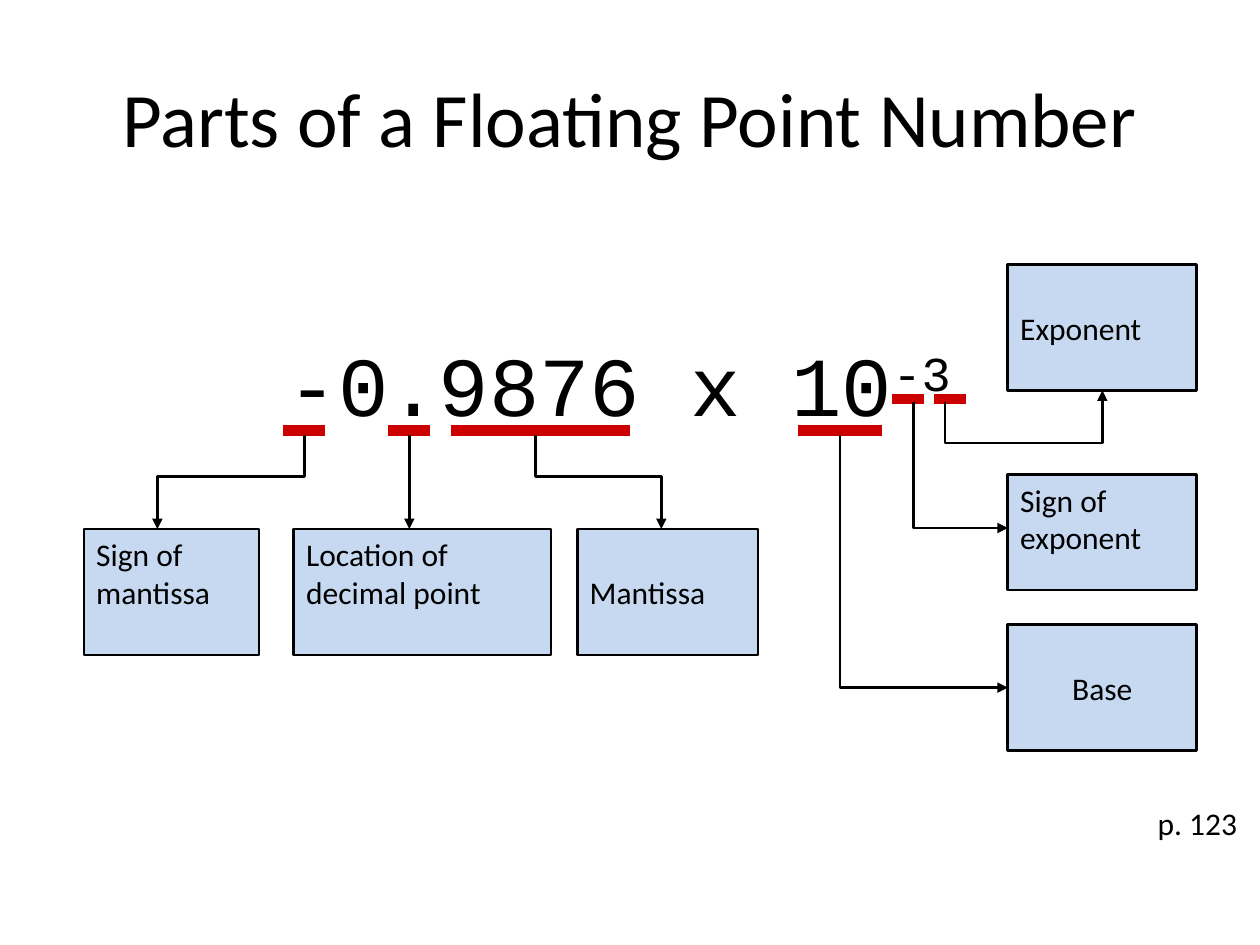
import dataclasses

import pptx
import pptx.dml.color
import pptx.enum.shapes
import pptx.enum.text
import pptx.oxml
import pptx.oxml.ns
import pptx.util

Cm = pptx.util.Cm
Pt = pptx.util.Pt
Align = pptx.enum.text.PP_ALIGN
Anchor = pptx.enum.text.MSO_ANCHOR
UNIT = Cm(2.54) / 12


@dataclasses.dataclass(frozen=True)
class Theme:
    """Colours, fonts and type sizes of the slide."""
    ink: str = "000000"
    fill: str = "C6D9F1"
    mark: str = "CC0000"
    sans: str = "Calibri"
    mono: str = "Courier New"
    title: int = 44
    sum: int = 48
    label: int = 18
    thin: float = 1.5
    thick: float = 6


THEME = Theme()


def tint(name):
    """Return the colour for a hex name."""
    return pptx.dml.color.RGBColor.from_string(name)


def grid(box, x, y):
    """Turn grid steps inside a box into slide lengths."""
    return round(box[0] + x * UNIT), round(box[1] + y * UNIT)


def write(par, text, size, font=THEME.sans):
    """Add one styled run to a paragraph."""
    run = par.add_run()
    run.text = text
    run.font.size = Pt(size)
    run.font.name = font
    run.font.color.rgb = tint(THEME.ink)
    return run


def frame(slide, box, align, anchor=Anchor.TOP):
    """Add a text box and return its first paragraph."""
    text = slide.shapes.add_textbox(*box).text_frame
    text.word_wrap = True
    text.vertical_anchor = anchor
    par = text.paragraphs[0]
    par.alignment = align
    return par


def stroke(line, color, width):
    """Set the colour and width of a line."""
    line.color.rgb = tint(color)
    line.width = Pt(width)


def point(line):
    """Put a triangle at the start of a line."""
    tag = '<a:headEnd %s type="triangle"/>' % pptx.oxml.ns.nsdecls("a")
    line._get_or_add_ln().append(pptx.oxml.parse_xml(tag))


def join(slide, start, end, color, width):
    """Draw a straight line without a shadow."""
    kind = pptx.enum.shapes.MSO_CONNECTOR.STRAIGHT
    link = slide.shapes.add_connector(kind, *start, *end)
    stroke(link.line, color, width)
    tag = "<a:effectLst %s/>" % pptx.oxml.ns.nsdecls("a")
    link._element.spPr.append(pptx.oxml.parse_xml(tag))
    return link


def bend(slide, box, spots):
    """Draw an angled arrow whose head is at the first spot."""
    first, *rest = [grid(box, *spot) for spot in spots]
    form = slide.shapes.build_freeform(*first)
    form.add_line_segments(rest, close=False)
    shape = form.convert_to_shape()
    shape.shadow.inherit = False
    shape.fill.background()
    stroke(shape.line, THEME.ink, THEME.thin)
    point(shape.line)


def label(slide, box, lines, align, anchor):
    """Draw a filled box that names one part of the number."""
    kind = pptx.enum.shapes.MSO_SHAPE.RECTANGLE
    shape = slide.shapes.add_shape(kind, *box)
    shape.shadow.inherit = False
    shape.fill.solid()
    shape.fill.fore_color.rgb = tint(THEME.fill)
    stroke(shape.line, THEME.ink, THEME.thin)
    text = shape.text_frame
    text.word_wrap = True
    text.vertical_anchor = anchor
    par = text.paragraphs[0]
    par.alignment = align
    for row, line in enumerate(lines):
        if row:
            par.add_line_break()
        write(par, line, THEME.label)


def head(slide, box):
    """Write the slide title."""
    par = frame(slide, box, Align.CENTER, Anchor.MIDDLE)
    write(par, "Parts of a Floating Point Number", THEME.title)


def number(slide, box):
    """Write the floating point number with its exponent raised."""
    par = frame(slide, box, Align.CENTER)
    par.space_before = Pt(THEME.label / 2)
    write(par, "-0.9876 x 10", THEME.sum, THEME.mono)
    power = write(par, "-3", THEME.sum, THEME.mono)
    power.font._element.set("baseline", "30000")


def marks(slide, box):
    """Underline each part of the number."""
    low, high = 16, 13
    for left, right, y in ((19, 23, low), (29, 33, low), (35, 52, low),
                           (68, 76, low), (77, 80, high), (81, 84, high)):
        join(slide, grid(box, left, y), grid(box, right, y),
             THEME.mark, THEME.thick)


def labels(slide, box):
    """Place the named boxes in a row and in a column."""
    row, col = 25.4, 88
    left, mid, top = Align.LEFT, Anchor.MIDDLE, Anchor.TOP
    for x, y, wide, high, lines, align, anchor in (
            (0, row, 16.7, 12, ["Sign of", "mantissa"], left, top),
            (20, row, 24.5, 12, ["Location of", "decimal point"], left, top),
            (47, row, 17.2, 12, ["Mantissa"], left, mid),
            (col, 0.2, 18, 12, ["Exponent"], left, mid),
            (col, 20.2, 18, 11, ["Sign of", "exponent"], left, top),
            (col, 34.5, 18, 12, ["Base"], Align.CENTER, mid)):
        area = (*grid(box, x, y), *grid((0, 0), wide, high))
        label(slide, area, lines, align, anchor)


def arrows(slide, box):
    """Lead from each underline to its named box."""
    row, turn, low, high, col = 25.4, 20.4, 16.4, 13.3, 88
    for end, start in ((7, 21), (55, 43)):
        bend(slide, box, ((end, row), (end, turn), (start, turn), (start, low)))
    link = join(slide, grid(box, 31, row), grid(box, 31, low),
                THEME.ink, THEME.thin)
    point(link.line)
    for x, y, start in ((72, 40.5, low), (79, 25.3, high)):
        bend(slide, box, ((col, y), (x, y), (x, start)))
    bend(slide, box, ((97, 12.2), (97, 17.2), (82, 17.2), (82, high)))


def page(slide, box):
    """Write the page reference."""
    write(frame(slide, box, Align.RIGHT), "p. 123", THEME.label)


def main():
    """Build the slide and save it."""
    deck = pptx.Presentation()
    deck.slide_width, deck.slide_height = Cm(25.4), Cm(19.05)
    slide = deck.slides.add_slide(deck.slide_layouts[6])
    head(slide, (Cm(1.27), Cm(0.76), Cm(22.86), Cm(3.18)))
    number(slide, (Cm(1.69), Cm(6.58), Cm(21.59), Cm(2.33)))
    page(slide, (Cm(22.23), Cm(16.08), Cm(2.96), Cm(1.02)))
    area = Cm(1.69), Cm(5.29)
    marks(slide, area)
    labels(slide, area)
    arrows(slide, area)
    deck.save("out.pptx")


if __name__ == "__main__":
    main()
